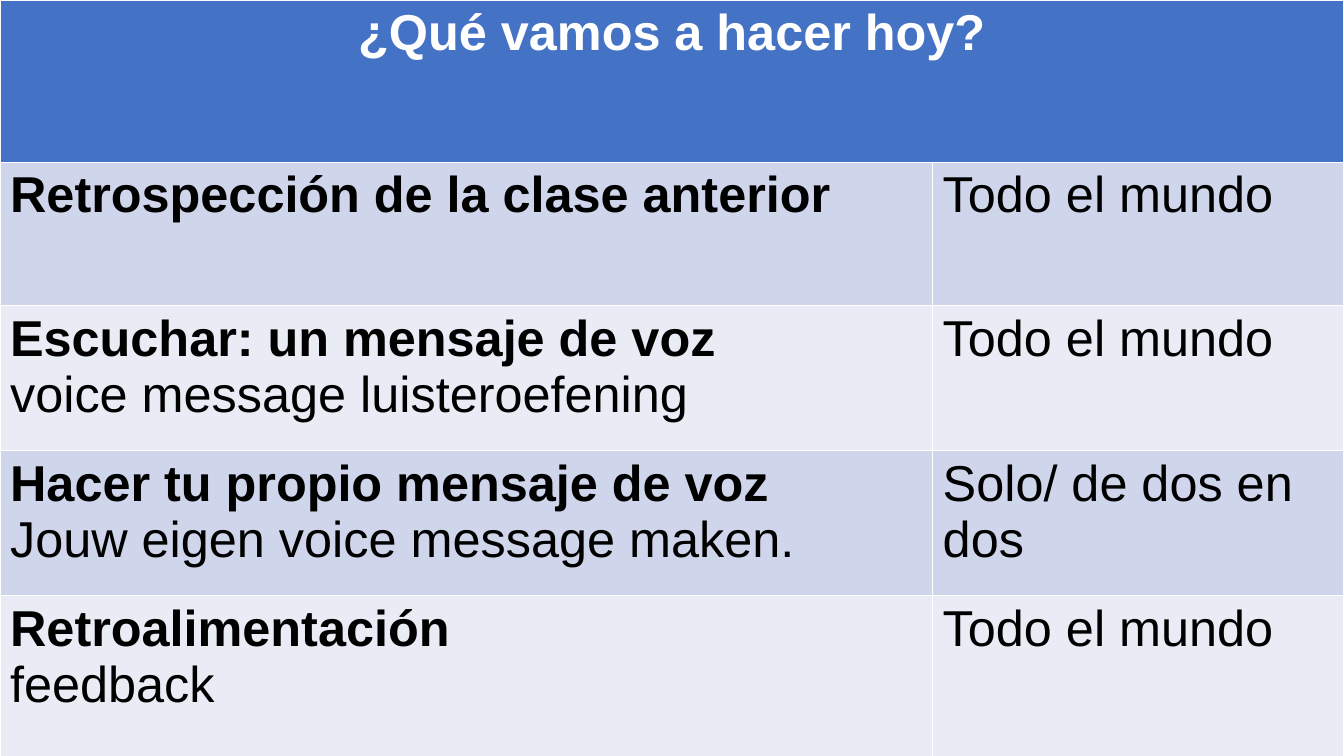
from pptx import Presentation
from pptx.dml.color import RGBColor
from pptx.enum import text
from pptx.util import Inches, Pt

THEME = {
    "font": "Arial",
    "size": Pt(36),
    "header_fill": RGBColor.from_string("4472C4"),
    "header_text": RGBColor.from_string("FFFFFF"),
    "body_text": RGBColor.from_string("000000"),
    "bands": [RGBColor.from_string("CFD5EA"), RGBColor.from_string("E9EBF5")],
}

TITLE = "¿Qué vamos a hacer hoy?"
ACTIVITIES = [
    (["Retrospección de la clase anterior"], "Todo el mundo"),
    (["Escuchar: un mensaje de voz", "voice message luisteroefening"], "Todo el mundo"),
    (["Hacer tu propio mensaje de voz", "Jouw eigen voice message maken."], "Solo/ de dos en dos"),
    (["Retroalimentación", "feedback"], "Todo el mundo"),
]
COLUMN_WIDTHS = [9.25, 4.08]
ROW_HEIGHTS = [1.61, 1.42, 1.44, 1.44, 2.32]


def fill_cell(cell, lines, fill, color, bold_first):
    cell.fill.solid()
    cell.fill.fore_color.rgb = fill
    frame = cell.text_frame
    for index, line in enumerate(lines):
        paragraph = frame.add_paragraph() if index else frame.paragraphs[0]
        run = paragraph.add_run()
        run.text = line
        run.font.color.rgb = color
        formats = {
            "name": THEME["font"],
            "size": THEME["size"],
            "bold": bold_first and index == 0,
        }
        for attribute, value in formats.items():
            setattr(run.font, attribute, value)


presentation = Presentation()
presentation.slide_width = Inches(13.33)
presentation.slide_height = Inches(7.5)
slide = presentation.slides.add_slide(presentation.slide_layouts[6])

agenda = slide.shapes.add_table(
    len(ROW_HEIGHTS), len(COLUMN_WIDTHS), Inches(0), Inches(0),
    Inches(sum(COLUMN_WIDTHS)), Inches(sum(ROW_HEIGHTS)),
).table
for column, width in zip(agenda.columns, COLUMN_WIDTHS):
    column.width = Inches(width)
for row, height in zip(agenda.rows, ROW_HEIGHTS):
    row.height = Inches(height)

heading = agenda.cell(0, 0)
heading.merge(agenda.cell(0, 1))
fill_cell(heading, [TITLE], THEME["header_fill"], THEME["header_text"], True)
heading.text_frame.paragraphs[0].alignment = text.PP_ALIGN.CENTER

for number, (activity, group) in enumerate(ACTIVITIES):
    band = THEME["bands"][number % 2]
    fill_cell(agenda.cell(number + 1, 0), activity, band, THEME["body_text"], True)
    fill_cell(agenda.cell(number + 1, 1), [group], band, THEME["body_text"], False)

presentation.save("out.pptx")
